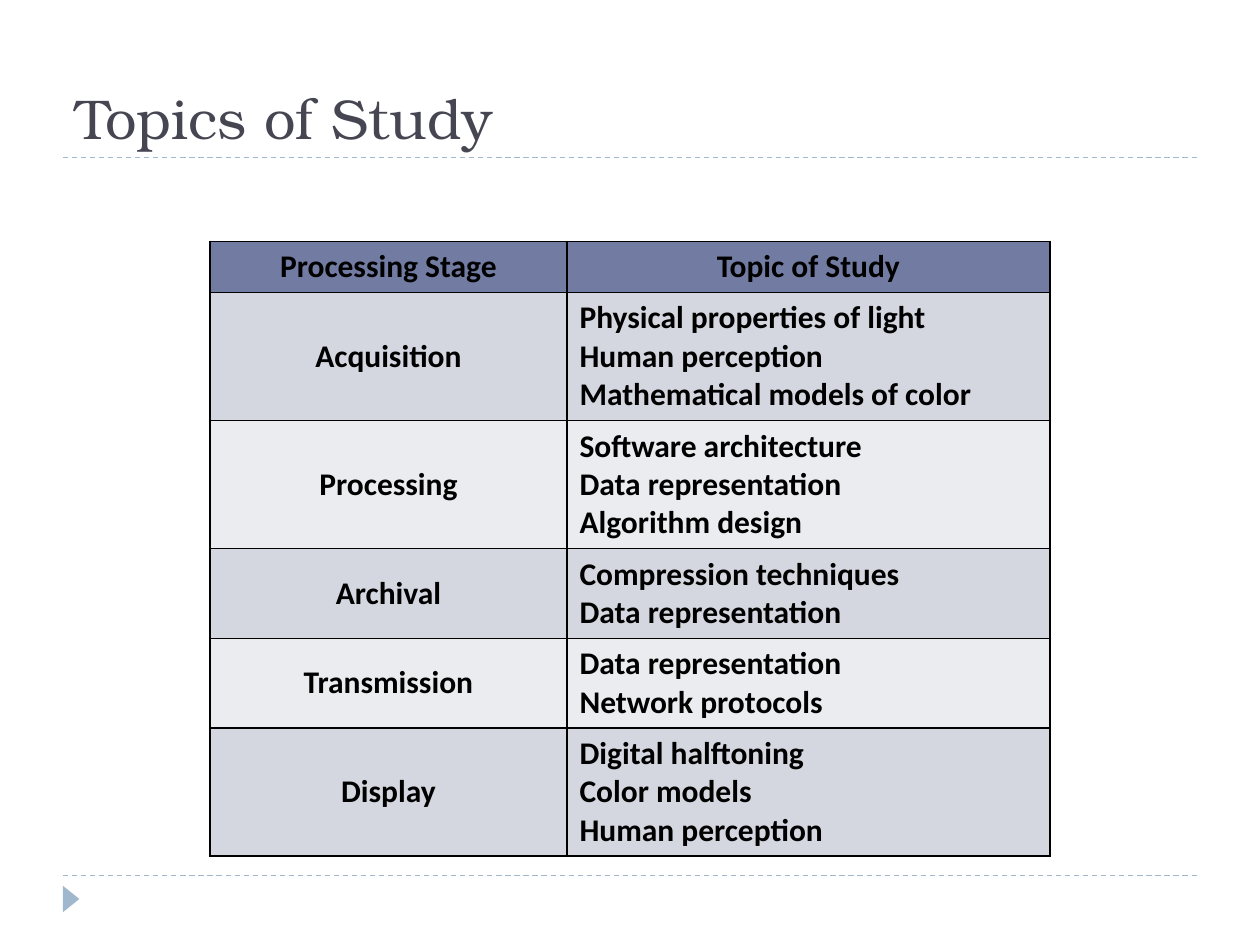
from dataclasses import dataclass

from lxml.etree import SubElement
from pptx import Presentation
from pptx.dml.color import RGBColor
from pptx.enum.dml import MSO_LINE
from pptx.enum.shapes import MSO_CONNECTOR, MSO_SHAPE
from pptx.enum.text import MSO_ANCHOR, MSO_AUTO_SIZE, PP_ALIGN
from pptx.oxml.ns import qn
from pptx.slide import Slide
from pptx.table import _Cell
from pptx.text.text import TextFrame
from pptx.util import Pt


@dataclass(frozen=True)
class Theme:
    title_font: str = "TeX Gyre Bonum"
    table_font: str = "Calibri"
    title_size: float = 32
    table_size: float = 18
    title: str = "464653"
    ink: str = "000000"
    accent: str = "9FB8CD"
    header: str = "727CA3"
    bands: tuple[str, str] = ("D5D7E0", "EBECF0")


@dataclass(frozen=True)
class Stage:
    name: str
    topics: tuple[str, ...]


THEME = Theme()
HEADER = Stage("Processing Stage", ("Topic of Study",))
STAGES = (
    Stage("Acquisition", ("Physical properties of light", "Human perception", "Mathematical models of color")),
    Stage("Processing", ("Software architecture", "Data representation", "Algorithm design")),
    Stage("Archival", ("Compression techniques", "Data representation")),
    Stage("Transmission", ("Data representation", "Network protocols")),
    Stage("Display", ("Digital halftoning", "Color models", "Human perception")),
)
MARGIN, CONTENT_WIDTH = 36, 648
RULE_TOPS = (90, 500.4)
TABLE_LEFT, TABLE_TOP = 120, 138
COLUMN_WIDTHS = (204, 276)
LINE_HEIGHT, CELL_PADDING = 22, 7.2


def write(frame: TextFrame, *lines: str, font: str, size: float, color: str,
          bold: bool = False, align: PP_ALIGN = PP_ALIGN.LEFT) -> None:
    for index, line in enumerate(lines):
        para = frame.paragraphs[0] if index == 0 else frame.add_paragraph()
        para.alignment = align
        span = para.add_run()
        span.text = line
        span.font.name = font
        span.font.size = Pt(size)
        span.font.bold = bold
        span.font.color.rgb = RGBColor.from_string(color)


def add_rule(page: Slide, top: float) -> None:
    rule = page.shapes.add_connector(
        MSO_CONNECTOR.STRAIGHT, Pt(MARGIN), Pt(top), Pt(MARGIN + CONTENT_WIDTH), Pt(top))
    rule.line.color.rgb = RGBColor.from_string(THEME.accent)
    rule.line.width = Pt(0.75)
    rule.line.dash_style = MSO_LINE.DASH
    SubElement(rule._element.spPr, qn("a:effectLst"))


def add_marker(page: Slide) -> None:
    marker = page.shapes.add_shape(
        MSO_SHAPE.ISOSCELES_TRIANGLE, Pt(33.1), Pt(509), Pt(15.1), Pt(9.4))
    marker.rotation = 90
    marker.shadow.inherit = False
    marker.fill.solid()
    marker.fill.fore_color.rgb = RGBColor.from_string(THEME.accent)
    marker.line.fill.background()


def add_title(page: Slide, text: str) -> None:
    title = page.shapes.title
    title.left, title.top = Pt(MARGIN), Pt(18)
    title.width, title.height = Pt(CONTENT_WIDTH), Pt(72)
    frame = title.text_frame
    frame.auto_size = MSO_AUTO_SIZE.NONE
    frame.vertical_anchor = MSO_ANCHOR.BOTTOM
    write(frame, text, font=THEME.title_font, size=THEME.title_size, color=THEME.title)


def add_borders(cell: _Cell) -> None:
    properties = cell._tc.get_or_add_tcPr()
    for side in ("lnL", "lnR", "lnT", "lnB"):
        border = SubElement(properties, qn(f"a:{side}"), w=str(Pt(1)))
        fill = SubElement(border, qn("a:solidFill"))
        SubElement(fill, qn("a:srgbClr"), val=THEME.ink)


def fill_cell(cell: _Cell, *lines: str, fill: str, align: PP_ALIGN) -> None:
    add_borders(cell)
    cell.fill.solid()
    cell.fill.fore_color.rgb = RGBColor.from_string(fill)
    cell.vertical_anchor = MSO_ANCHOR.MIDDLE
    write(cell.text_frame, *lines, font=THEME.table_font, size=THEME.table_size,
          color=THEME.ink, bold=True, align=align)


def add_stage_table(page: Slide) -> None:
    stages = (HEADER, *STAGES)
    heights = [CELL_PADDING + LINE_HEIGHT * len(stage.topics) for stage in stages]
    table = page.shapes.add_table(
        len(stages), len(COLUMN_WIDTHS), Pt(TABLE_LEFT), Pt(TABLE_TOP),
        Pt(sum(COLUMN_WIDTHS)), Pt(sum(heights))).table
    table.horz_banding = False
    for column, width in zip(table.columns, COLUMN_WIDTHS):
        column.width = Pt(width)
    for index, (stage, height) in enumerate(zip(stages, heights)):
        is_header = index == 0
        fill = THEME.header if is_header else THEME.bands[(index - 1) % 2]
        table.rows[index].height = Pt(height)
        fill_cell(table.cell(index, 0), stage.name, fill=fill, align=PP_ALIGN.CENTER)
        fill_cell(table.cell(index, 1), *stage.topics, fill=fill,
                  align=PP_ALIGN.CENTER if is_header else PP_ALIGN.LEFT)


def main() -> None:
    deck = Presentation()
    deck.slide_width, deck.slide_height = Pt(720), Pt(540)
    page = deck.slides.add_slide(deck.slide_layouts[5])
    for top in RULE_TOPS:
        add_rule(page, top)
    add_marker(page)
    add_title(page, "Topics of Study")
    add_stage_table(page)
    deck.save("out.pptx")


if __name__ == "__main__":
    main()
